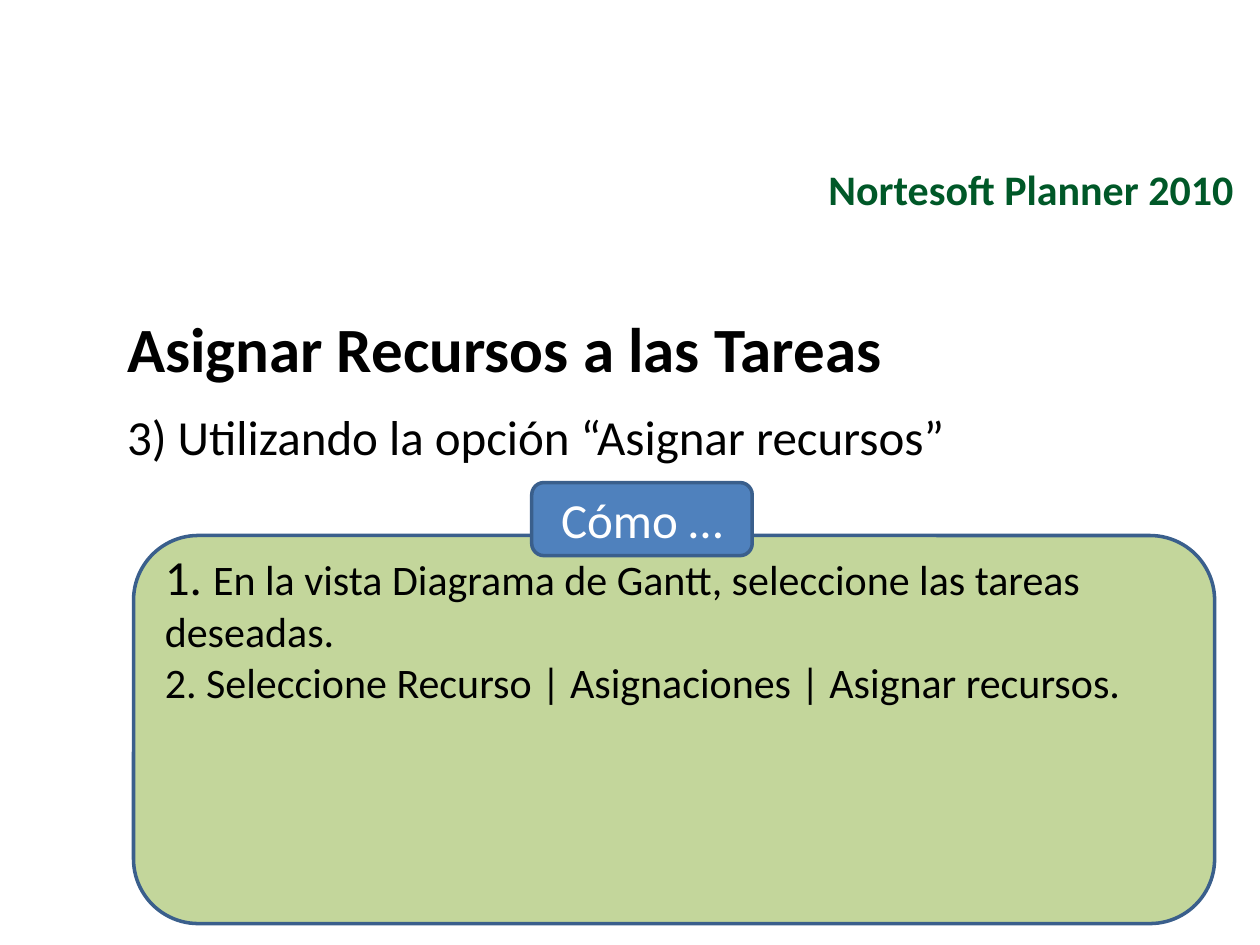
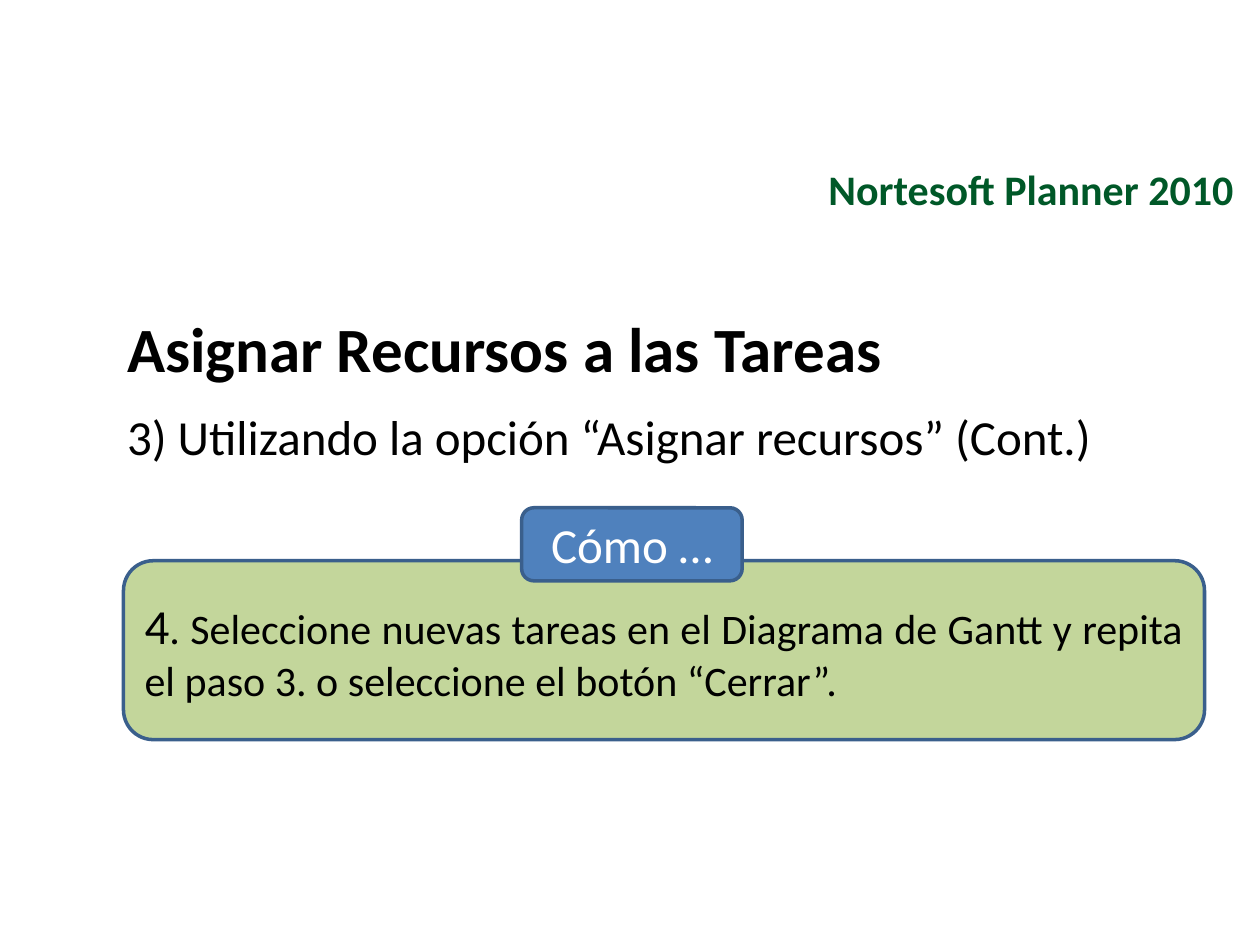
from pptx import Presentation
from pptx.dml.color import RGBColor
from pptx.enum.shapes import MSO_SHAPE
from pptx.enum.text import MSO_ANCHOR, PP_ALIGN
from pptx.util import Inches, Pt

ROUNDED = MSO_SHAPE.ROUNDED_RECTANGLE
TOP, MIDDLE = MSO_ANCHOR.TOP, MSO_ANCHOR.MIDDLE
LEFT, CENTER, RIGHT, JUSTIFY = PP_ALIGN.LEFT, PP_ALIGN.CENTER, PP_ALIGN.RIGHT, PP_ALIGN.JUSTIFY

GREEN = RGBColor(0x00, 0x58, 0x28)
BLACK = RGBColor(0x00, 0x00, 0x00)
WHITE = RGBColor(0xFF, 0xFF, 0xFF)
PANEL_FILL = RGBColor(0xC3, 0xD6, 0x9B)
TAG_FILL = RGBColor(0x4F, 0x81, 0xBD)
OUTLINE = RGBColor(0x3A, 0x5F, 0x8C)
FONT = "Calibri"

COURSE = "Nortesoft Planner 2010"
TOPIC = "Asignar Recursos a las Tareas"
TAG = "Cómo …"
SLIDES = [
    {
        "subtitle": "3) Utilizando la opción “Asignar recursos”",
        "steps": [
            [("1. ", 28), ("En la vista Diagrama de Gantt, seleccione las tareas deseadas.", 24)],
            [("2. Seleccione Recurso | Asignaciones | Asignar recursos.", 24)],
        ],
        "panel": (1.06, 4.25, 3.08),
        "align": LEFT,
        "free_space": 1.63,
    },
    {
        "subtitle": "3) Utilizando la opción “Asignar recursos” (Cont.)",
        "steps": [
            [("4", 28), (". Seleccione nuevas tareas en el Diagrama de Gantt y repita "
                         "el paso 3. o seleccione el botón “Cerrar”.", 24)],
        ],
        "panel": (0.98, 4.45, 1.42),
        "align": JUSTIFY,
        "free_space": 0,
    },
]

WIDTH, HEIGHT = 10, 7.5
HEADER_BOX = (5.39, 1.15, 4.5, 0.69)
BODY_BOX = (0.91, 2.41, 8.55, HEIGHT - 2.41)
PANEL_WIDTH = 8.58
TAG_WIDTH, TAG_HEIGHT = 1.75, 0.58
TAG_SHIFT, TAG_RISE = 3.16, 0.42


def write(shape, paragraphs, color=BLACK, bold_first=False, align=LEFT, anchor=MIDDLE, before=0, after=0):
    frame = shape.text_frame
    frame.word_wrap = True
    frame.vertical_anchor = anchor
    for index, runs in enumerate(paragraphs):
        paragraph = frame.add_paragraph() if index else frame.paragraphs[0]
        paragraph.alignment = align
        paragraph.space_before = Pt(before if index else 0)
        paragraph.space_after = Pt(after)
        for text, size in runs:
            run = paragraph.add_run()
            run.text = text
            run.font.name = FONT
            run.font.size = Pt(size)
            run.font.bold = bold_first and index == 0
            run.font.color.rgb = color


def add_card(slide, box, fill):
    shape = slide.shapes.add_shape(ROUNDED, *map(Inches, box))
    shape.shadow.inherit = False
    shape.fill.solid()
    shape.fill.fore_color.rgb = fill
    shape.line.color.rgb = OUTLINE
    shape.line.width = Pt(2)
    return shape


def add_header(slide):
    title = slide.shapes.title
    title.left, title.top, title.width, title.height = map(Inches, HEADER_BOX)
    write(title, [[(COURSE, 24)]], color=GREEN, bold_first=True, align=RIGHT)


def add_body(slide, subtitle):
    body = slide.shapes.add_textbox(*map(Inches, BODY_BOX))
    write(body, [[(TOPIC, 36)], [(subtitle, 28)]], bold_first=True, anchor=TOP, before=6, after=6)


def add_how_to(slide, content):
    left, top, height = content["panel"]
    panel = add_card(slide, (left, top, PANEL_WIDTH, height), PANEL_FILL)
    panel.text_frame.margin_bottom = Inches(0.05 + content["free_space"])
    write(panel, content["steps"], align=content["align"])
    tag = add_card(slide, (left + TAG_SHIFT, top - TAG_RISE, TAG_WIDTH, TAG_HEIGHT), TAG_FILL)
    write(tag, [[(TAG, 28)]], color=WHITE, align=CENTER)


def main():
    presentation = Presentation()
    presentation.slide_width, presentation.slide_height = Inches(WIDTH), Inches(HEIGHT)
    title_only = presentation.slide_layouts[5]
    for content in SLIDES:
        slide = presentation.slides.add_slide(title_only)
        add_header(slide)
        add_body(slide, content["subtitle"])
        add_how_to(slide, content)
    presentation.save("out.pptx")


if __name__ == "__main__":
    main()
